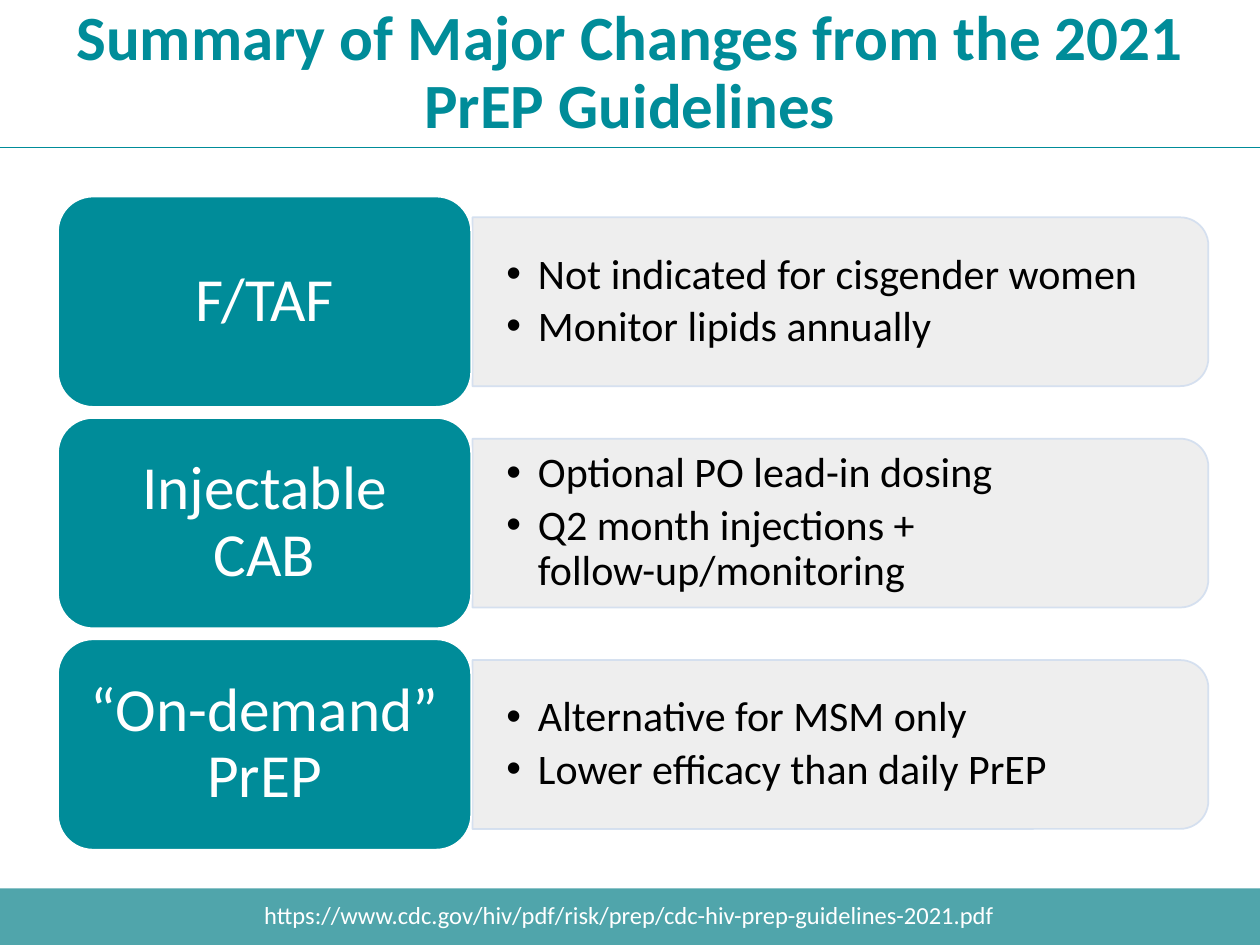
from lxml.etree import SubElement
from pptx import Presentation
from pptx.dml.color import RGBColor
from pptx.enum.shapes import MSO_CONNECTOR, MSO_SHAPE
from pptx.enum.text import MSO_ANCHOR, PP_ALIGN
from pptx.oxml.ns import qn
from pptx.util import Inches, Pt

W, H = 10, 7.5
COLORS = {"teal": "008C99", "footer": "50A5AB", "panel": "EDEDED",
          "edge": "D2DEEF", "white": "FFFFFF", "black": "000000"}

# Row grid: label on the left, panel centred beside it
TITLE_H, FOOTER_H = 1.17, 0.45
LEFT, TOP, PITCH = 0.46, 1.56, 1.757
LABEL_W, LABEL_H = 3.28, 1.67
PANEL_X, PANEL_W, PANEL_H = 3.75, 5.84, 1.34

ROWS = [
    ("F/TAF", ["Not indicated for cisgender women", "Monitor lipids annually"]),
    ("Injectable CAB", ["Optional PO lead-in dosing",
                        "Q2 month injections + follow-up/monitoring"]),
    ("“On-demand” PrEP", ["Alternative for MSM only",
                          "Lower efficacy than daily PrEP"]),
]
SOURCE = "https://www.cdc.gov/hiv/pdf/risk/prep/cdc-hiv-prep-guidelines-2021.pdf"


def rgb(name):
    return RGBColor.from_string(COLORS[name])


def set_all(obj, **values):
    for name, value in values.items():
        setattr(obj, name, value)


def set_alpha(fill_owner, percent):
    for color in fill_owner.iter(qn("a:srgbClr")):
        SubElement(color, qn("a:alpha"), val=str(percent * 1000))


def add_bullet(p, indent=0.25):
    pPr = p._p.get_or_add_pPr()
    pPr.set("marL", str(Inches(indent)))
    pPr.set("indent", str(-Inches(indent)))
    SubElement(pPr, qn("a:buFont"), typeface="Arial")
    SubElement(pPr, qn("a:buChar"), char="•")


def fill_text(sp, lines, size, color, bold=False, bullets=False,
              align=PP_ALIGN.CENTER, spacing=0.9, after=0, margins=(0.1, 0.05)):
    tf = sp.text_frame
    mx, my = (Inches(m) for m in margins)
    set_all(tf, word_wrap=True, vertical_anchor=MSO_ANCHOR.MIDDLE,
            margin_left=mx, margin_right=mx, margin_top=my, margin_bottom=my)
    for i, line in enumerate(lines):
        p = tf.paragraphs[0] if i == 0 else tf.add_paragraph()
        set_all(p, alignment=align, line_spacing=spacing,
                space_before=Pt(0), space_after=Pt(after))
        if bullets:
            add_bullet(p)
        r = p.add_run()
        r.text = line
        set_all(r.font, name="Calibri", size=Pt(size), bold=bold)
        r.font.color.rgb = rgb(color)


def add_text(s, box, lines, size, color, **style):
    sp = s.shapes.add_textbox(*map(Inches, box))
    fill_text(sp, lines, size, color, **style)


def add_box(s, kind, box, fill, line=None):
    sp = s.shapes.add_shape(kind, *map(Inches, box))
    sp.shadow.inherit = False
    sp.fill.solid()
    sp.fill.fore_color.rgb = rgb(fill)
    if line:
        sp.line.color.rgb = rgb(line)
        sp.line.width = Pt(1)
    else:
        sp.line.fill.background()
    return sp


def add_rule(s, y):
    cn = s.shapes.add_connector(MSO_CONNECTOR.STRAIGHT, 0, Inches(y),
                                Inches(W), Inches(y))
    cn.line.color.rgb = rgb("teal")
    cn.line.width = Pt(0.5)
    SubElement(cn._element.spPr, qn("a:effectLst"))


def add_title(s, text):
    title = s.shapes.title
    set_all(title, left=0, top=0, width=Inches(W), height=Inches(TITLE_H))
    fill_text(title, [text], 36, "teal", bold=True)


def add_row(s, y, label, points):
    mid = y + LABEL_H / 2
    # Panel: upright shape turned a quarter so its rounded end faces right
    box = (PANEL_X + (PANEL_W - PANEL_H) / 2, mid - PANEL_W / 2, PANEL_H, PANEL_W)
    panel = add_box(s, MSO_SHAPE.ROUND_2_SAME_RECTANGLE, box, "panel", "edge")
    panel.rotation = 90
    set_alpha(panel._element.spPr, 90)
    add_text(s, (PANEL_X, mid - 0.605, 5.77, 1.21), points, 24, "black",
             bullets=True, align=PP_ALIGN.LEFT, after=4, margins=(0.27, 0.14))
    # Label
    add_box(s, MSO_SHAPE.ROUNDED_RECTANGLE, (LEFT, y, LABEL_W, LABEL_H),
            "teal", "white")
    pad = 0.08
    add_text(s, (LEFT + pad, y + pad, LABEL_W - 2 * pad, LABEL_H - 2 * pad),
             [label], 35, "white", margins=(0.15, 0.07))


def main():
    prs = Presentation()
    prs.slide_width, prs.slide_height = Inches(W), Inches(H)
    s = prs.slides.add_slide(prs.slide_layouts[5])

    # Frame
    add_box(s, MSO_SHAPE.RECTANGLE, (0, H - FOOTER_H, W, FOOTER_H), "footer")
    add_rule(s, TITLE_H)
    add_title(s, "Summary of Major Changes from the 2021 PrEP Guidelines")

    # Rows
    for i, (label, points) in enumerate(ROWS):
        add_row(s, TOP + i * PITCH, label, points)

    # Source
    add_text(s, (1.53, 7.09, 6.93, 0.34), [SOURCE], 14, "white", spacing=1)

    prs.save("out.pptx")


if __name__ == "__main__":
    main()
